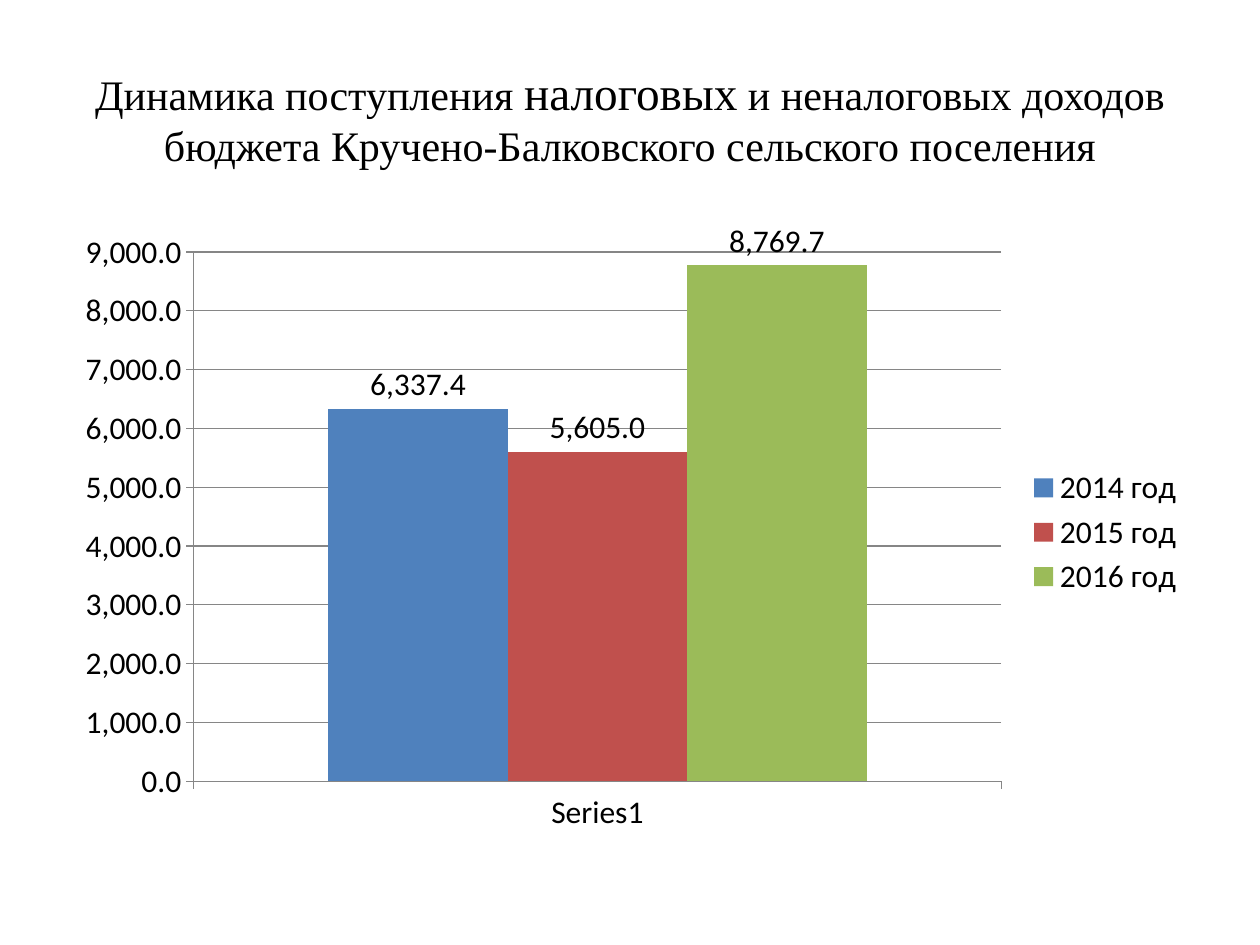
from dataclasses import dataclass

from pptx import Presentation
from pptx.chart.data import CategoryChartData
from pptx.dml.color import RGBColor
from pptx.enum.chart import XL_CHART_TYPE, XL_LABEL_POSITION, XL_LEGEND_POSITION, XL_TICK_MARK
from pptx.enum.text import MSO_ANCHOR, MSO_AUTO_SIZE, PP_ALIGN
from pptx.util import Inches, Pt

COLUMNS = XL_CHART_TYPE.COLUMN_CLUSTERED
OUTSIDE_END = XL_LABEL_POSITION.OUTSIDE_END
RIGHT = XL_LEGEND_POSITION.RIGHT
TICK_OUT = XL_TICK_MARK.OUTSIDE
MIDDLE = MSO_ANCHOR.MIDDLE
NO_FIT = MSO_AUTO_SIZE.NONE
CENTER = PP_ALIGN.CENTER


@dataclass(frozen=True)
class Theme:
    title_font: str = "Times New Roman"
    chart_font: str = "Calibri"
    title_size: int = 24
    accent_size: int = 27
    chart_size: int = 18
    text: str = "000000"
    axis: str = "868686"
    series: tuple = ("4F81BD", "C0504D", "9BBB59")


THEME = Theme()
NUMBER_FORMAT = "#,##0.0"
TITLE = [
    ("Динамика поступления ", THEME.title_size),
    ("налоговых", THEME.accent_size),
    (" и неналоговых доходов бюджета Кручено-Балковского сельского поселения", THEME.title_size),
]
REVENUES = {"2014 год": 6337.4, "2015 год": 5605.0, "2016 год": 8769.7}


def share_box(prs, left, top, width, height):
    w, h = prs.slide_width, prs.slide_height
    return int(w * left), int(h * top), int(w * width), int(h * height)


def set_font(font, name, size, color):
    font.name = name
    font.size = Pt(size)
    font.color.rgb = RGBColor.from_string(color)


def style_line(line):
    line.color.rgb = RGBColor.from_string(THEME.axis)
    line.width = Pt(0.75)


def add_title(s, box):
    sp = s.shapes.title
    sp.left, sp.top, sp.width, sp.height = box
    tf = sp.text_frame
    tf.word_wrap = True
    tf.auto_size = NO_FIT
    tf.vertical_anchor = MIDDLE
    p = tf.paragraphs[0]
    p.alignment = CENTER
    for text, size in TITLE:
        r = p.add_run()
        r.text = text
        set_font(r.font, THEME.title_font, size, THEME.text)


def add_revenue_chart(s, box):
    data = CategoryChartData(number_format=NUMBER_FORMAT)
    data.categories = ["Series1"]
    for year, value in REVENUES.items():
        data.add_series(year, [value])
    chart = s.shapes.add_chart(COLUMNS, *box, data).chart
    set_font(chart.font, THEME.chart_font, THEME.chart_size, THEME.text)
    chart.has_title = False
    chart.has_legend = True
    chart.legend.position = RIGHT
    chart.legend.include_in_layout = False

    for axis in (chart.category_axis, chart.value_axis):
        axis.major_tick_mark = TICK_OUT
        style_line(axis.format.line)
    values = chart.value_axis
    values.minimum_scale, values.maximum_scale, values.major_unit = 0, 9000, 1000
    values.has_major_gridlines = True
    style_line(values.major_gridlines.format.line)
    values.tick_labels.number_format = NUMBER_FORMAT
    values.tick_labels.number_format_is_linked = False

    plot = chart.plots[0]
    plot.gap_width = 150
    plot.overlap = 0
    plot.vary_by_categories = False
    for series, color in zip(plot.series, THEME.series):
        fill = series.format.fill
        fill.solid()
        fill.fore_color.rgb = RGBColor.from_string(color)
        labels = series.data_labels
        labels.show_value = True
        labels.position = OUTSIDE_END
        labels.number_format = NUMBER_FORMAT
        labels.number_format_is_linked = False


def main():
    prs = Presentation()
    prs.slide_width, prs.slide_height = Inches(10), Inches(7.5)
    s = prs.slides.add_slide(prs.slide_layouts[5])
    add_title(s, share_box(prs, 0.05, 0.04, 0.9, 1 / 6))
    add_revenue_chart(s, share_box(prs, 0.05, 7 / 30, 0.9, 0.66))
    prs.save("out.pptx")


if __name__ == "__main__":
    main()
